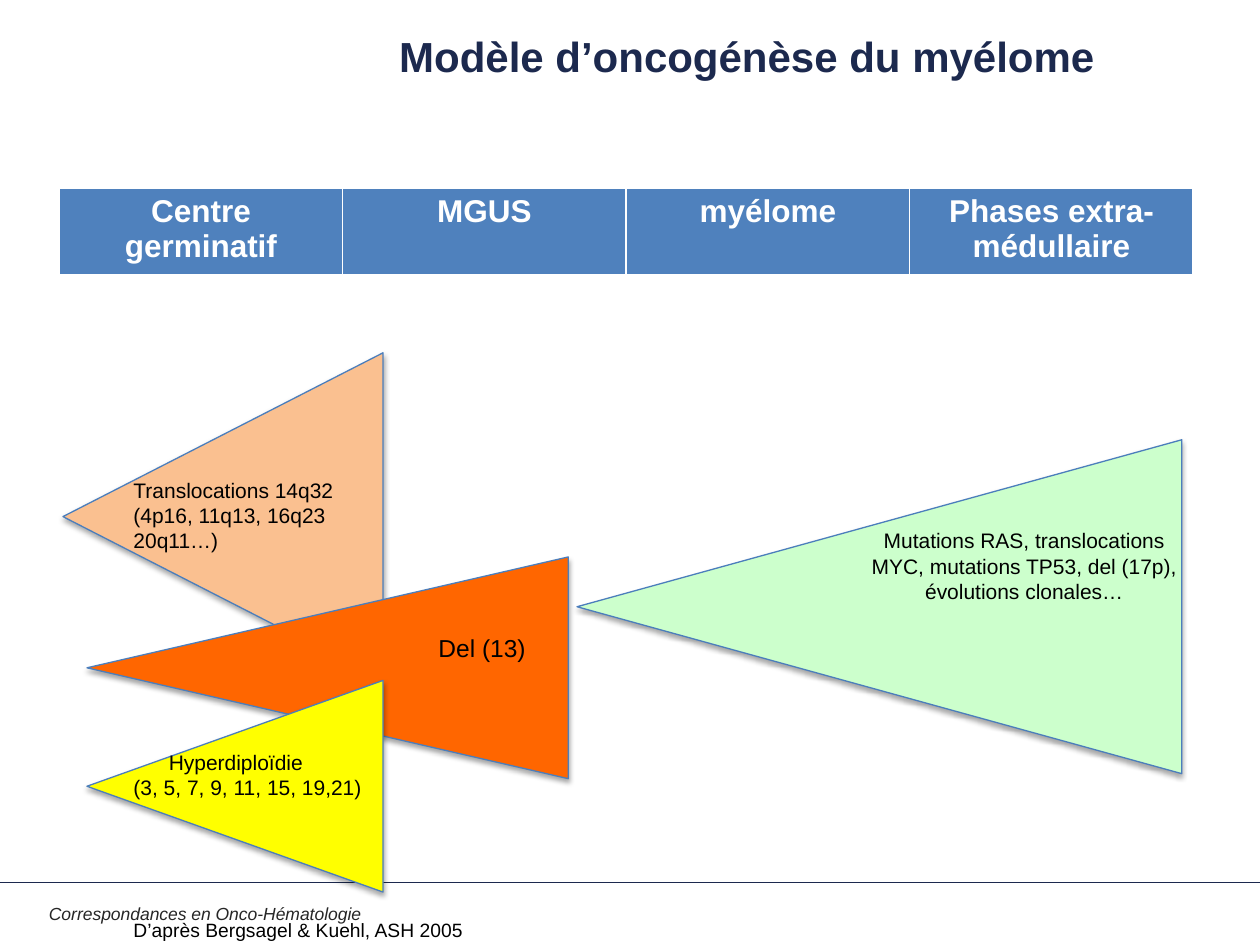
from lxml import etree
from pptx import Presentation
from pptx.dml.color import RGBColor
from pptx.enum.shapes import MSO_CONNECTOR, MSO_SHAPE
from pptx.enum.text import MSO_ANCHOR, PP_ALIGN
from pptx.oxml import parse_xml
from pptx.oxml.ns import nsdecls, qn
from pptx.util import Inches, Pt

TRIANGLE = MSO_SHAPE.ISOSCELES_TRIANGLE
STRAIGHT = MSO_CONNECTOR.STRAIGHT
LEFT, CENTER = PP_ALIGN.LEFT, PP_ALIGN.CENTER
TOP, MIDDLE = MSO_ANCHOR.TOP, MSO_ANCHOR.MIDDLE

NAVY = RGBColor(0x1C, 0x29, 0x4E)
BLACK = RGBColor(0x00, 0x00, 0x00)
WHITE = RGBColor(0xFF, 0xFF, 0xFF)
GRAY = RGBColor(0x26, 0x26, 0x26)
HEADER_BLUE = RGBColor(0x4F, 0x81, 0xBD)
OUTLINE_BLUE = RGBColor(0x4B, 0x7E, 0xBC)
PEACH = RGBColor(0xFA, 0xC0, 0x90)
ORANGE = RGBColor(0xFF, 0x66, 0x00)
GREEN = RGBColor(0xCC, 0xFF, 0xCC)
YELLOW = RGBColor(0xFF, 0xFF, 0x00)

FONT = "Arial"
COLUMNS, ROWS = 100, 75
PHASES = ["Centre germinatif", "MGUS", "myélome", "Phases extra-médullaire"]
BORDERS = {"lnL": 1, "lnR": 1, "lnT": 1, "lnB": 3}

# column, row, columns wide, rows high, fill
EVENTS = [
    (5, 28, 25.4, 26, PEACH),
    (6.9, 44.2, 38.2, 17.6, ORANGE),
    (45.8, 34.9, 48, 26.5, GREEN),
    (6.9, 54, 23.5, 16.8, YELLOW),
]


def write(text_frame, text, size=12, color=BLACK, bold=False, italic=False,
          align=LEFT, first_indent=0):
    """Write one paragraph per line of text; the first may be indented."""
    for index, line in enumerate(text.split("\n")):
        paragraph = text_frame.paragraphs[0] if index == 0 else text_frame.add_paragraph()
        paragraph.alignment = align
        if index == 0 and first_indent:
            paragraph._p.get_or_add_pPr().set("indent", str(Inches(first_indent)))
        run = paragraph.add_run()
        run.text = line
        font = run.font
        font.name, font.size = FONT, Pt(size)
        font.bold, font.italic = bold, italic
        font.color.rgb = color


class SlideBuilder:
    """Places styled elements on a grid of COLUMNS by ROWS."""

    def __init__(self, presentation):
        self.slide = presentation.slides.add_slide(presentation.slide_layouts[6])
        self.column = presentation.slide_width / COLUMNS
        self.row = presentation.slide_height / ROWS

    def place(self, column, row, width, height):
        return (round(column * self.column), round(row * self.row),
                round(width * self.column), round(height * self.row))

    def text(self, area, text, anchor=TOP, inset=0.0, **text_format):
        frame = self.slide.shapes.add_textbox(*self.place(*area)).text_frame
        frame.word_wrap = True
        frame.vertical_anchor = anchor
        frame.margin_left = frame.margin_right = Inches(inset)
        frame.margin_top = frame.margin_bottom = Inches(inset / 2)
        write(frame, text, **text_format)

    def rule(self, row):
        left, top, width, _ = self.place(0, row, COLUMNS, 0)
        line = self.slide.shapes.add_connector(STRAIGHT, left, top, left + width, top)
        line.line.color.rgb = NAVY
        line.line.width = Pt(0.25)
        etree.SubElement(line._element.spPr, qn("a:effectLst"))

    def left_triangle(self, column, row, width, height, fill):
        """Draw a triangle that points left and fills the given area."""
        left, top, across, down = self.place(column, row, width, height)
        shape = self.slide.shapes.add_shape(
            TRIANGLE, left + (across - down) // 2, top + (down - across) // 2, down, across)
        shape.rotation = 270
        shape.fill.solid()
        shape.fill.fore_color.rgb = fill
        shape.line.color.rgb = OUTLINE_BLUE
        shape.line.width = Pt(0.75)
        shape.shadow.inherit = False
        shape._element.spPr.find(qn("a:effectLst")).append(parse_xml(
            f'<a:outerShdw {nsdecls("a")} blurRad="{Pt(3.1)}" dist="{Pt(1.8)}" '
            'dir="5400000" rotWithShape="0"><a:srgbClr val="000000">'
            '<a:alpha val="35000"/></a:srgbClr></a:outerShdw>'))

    def header_table(self, area, labels):
        table = self.slide.shapes.add_table(1, len(labels), *self.place(*area)).table
        for cell, label in zip(table.rows[0].cells, labels):
            cell.fill.solid()
            cell.fill.fore_color.rgb = HEADER_BLUE
            write(cell.text_frame, label, size=18, color=WHITE, bold=True, align=CENTER)
            properties = cell._tc.get_or_add_tcPr()
            for position, (side, width) in enumerate(BORDERS.items()):
                properties.insert(position, parse_xml(
                    f'<a:{side} {nsdecls("a")} w="{Pt(width)}"><a:solidFill>'
                    f'<a:srgbClr val="{WHITE}"/></a:solidFill></a:{side}>'))


def main():
    presentation = Presentation()
    presentation.slide_width, presentation.slide_height = Inches(10), Inches(7.5)
    builder = SlideBuilder(presentation)

    builder.rule(70)
    builder.text((2.9, 70, 27.4, 5), "Correspondances en Onco-Hématologie",
                 anchor=MIDDLE, inset=0.1, size=10, color=GRAY, italic=True)
    builder.text((30.7, 1.9, 67, 12.5), "Modèle d’oncogénèse du myélome",
                 inset=0.1, size=24, color=NAVY, bold=True)
    builder.header_table((4.7, 14.9, 90, 6.4), PHASES)
    for event in EVENTS:
        builder.left_triangle(*event)

    builder.text((10.6, 37.9, 19, 6),
                 "Translocations 14q32\n(4p16, 11q13, 16q23\n20q11…)")
    builder.text((68.3, 41.9, 26, 6),
                 "Mutations RAS, translocations\nMYC, mutations TP53, del (17p),\n"
                 "évolutions clonales…", align=CENTER)
    builder.text((34.8, 50.2, 10, 2.5), "Del (13)", size=14)
    builder.text((10.6, 59.5, 20, 4), "Hyperdiploïdie\n(3, 5, 7, 9, 11, 15, 19,21)",
                 first_indent=0.28)
    builder.text((10.6, 72.9, 30, 2), "D’après Bergsagel & Kuehl, ASH 2005", size=11)

    presentation.save("out.pptx")


if __name__ == "__main__":
    main()
